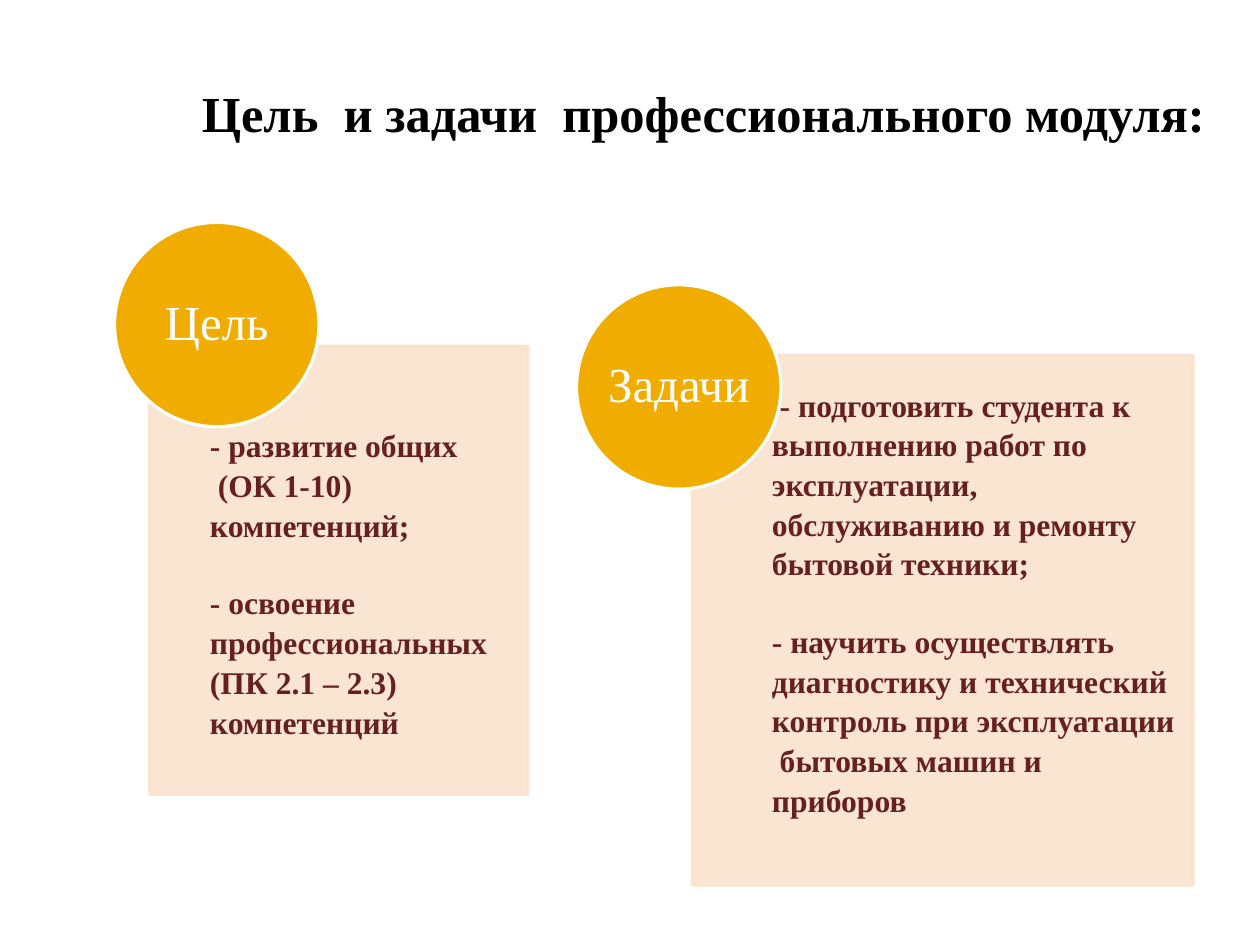
import pptx
import pptx.util
import pptx.dml.color
import pptx.enum.shapes
import pptx.enum.text
import pptx.oxml
import pptx.oxml.ns
import lxml.etree

Inches, Pt = pptx.util.Inches, pptx.util.Pt
RGBColor = pptx.dml.color.RGBColor
MSO_SHAPE = pptx.enum.shapes.MSO_SHAPE
ANCHOR = pptx.enum.text.MSO_ANCHOR
ALIGN = pptx.enum.text.PP_ALIGN

BLACK = RGBColor(0x00, 0x00, 0x00)
WHITE = RGBColor(0xFF, 0xFF, 0xFF)
PEACH = RGBColor(0xF9, 0xE3, 0xCC)
AMBER = RGBColor(0xF0, 0xAD, 0x00)
MAROON = RGBColor(0x67, 0x20, 0x20)
FONT = "Times New Roman"
CIRCLE_SIZE = 1.8


def write_text(sp, paragraphs, size, color, bold=False, align=ALIGN.LEFT,
               anchor=ANCHOR.MIDDLE, spacing=1.0, wrap=True, inset=0, right=0):
    """Fill a shape with (text, space before) paragraphs."""
    tf = sp.text_frame
    tf.word_wrap = wrap
    tf.vertical_anchor = anchor
    tf.margin_left = Inches(inset)
    tf.margin_right = Inches(right)
    tf.margin_top = tf.margin_bottom = 0
    for i, (text, before) in enumerate(paragraphs):
        p = tf.add_paragraph() if i else tf.paragraphs[0]
        p.alignment = align
        p.line_spacing = spacing
        if before:
            p.space_before = Pt(before)
        r = p.add_run()
        r.text = text
        r.font.name = FONT
        r.font.size = Pt(size)
        r.font.bold = bold
        r.font.color.rgb = color


def add_shape(s, kind, box, fill, line, opacity=None):
    sp = s.shapes.add_shape(kind, *map(Inches, box))
    sp.shadow.inherit = False
    sp.fill.solid()
    sp.fill.fore_color.rgb = fill
    sp.line.color.rgb = line
    sp.line.width = Pt(2)
    if opacity:
        for clr in sp._element.spPr.iter(pptx.oxml.ns.qn("a:srgbClr")):
            alpha = lxml.etree.SubElement(clr, pptx.oxml.ns.qn("a:alpha"))
            alpha.set("val", str(opacity * 1000))
    return sp


def add_card(s, label, panel, circle, text_box, right, paragraphs):
    """A peach panel with its text and a labelled circle at its corner."""
    add_shape(s, MSO_SHAPE.RECTANGLE, panel, PEACH, PEACH, opacity=90)
    body = s.shapes.add_textbox(*map(Inches, text_box))
    write_text(body, paragraphs, 20, MAROON, bold=True, anchor=ANCHOR.TOP,
               spacing=1.05, right=right)
    disc = add_shape(s, MSO_SHAPE.OVAL, (*circle, CIRCLE_SIZE, CIRCLE_SIZE),
                     AMBER, WHITE)
    write_text(disc, [(label, 0)], 31, WHITE, align=ALIGN.CENTER,
               spacing=0.9, wrap=False)


def main():
    prs = pptx.Presentation()
    prs.slide_width, prs.slide_height = Inches(11.1), Inches(8.3)
    s = prs.slides.add_slide(prs.slide_layouts[6])

    # Title
    title = s.shapes.add_textbox(Inches(1.68), Inches(0.49), Inches(9.23), Inches(1))
    write_text(title, [("Цель  и задачи  профессионального модуля:", 0)],
               32, BLACK, bold=True, inset=0.1, right=0.1)

    # Goal
    add_card(s, "Цель", (1.32, 3.05, 3.33, 3.95), (1.01, 1.96),
             (1.85, 3.74, 2.8, 3.26), 0.19,
             [("- развитие общих", 0),
              (" (ОК 1-10) компетенций;", 0),
              ("- освоение профессиональных", 24),
              ("(ПК 2.1 – 2.3) компетенций", 0)])

    # Tasks
    add_card(s, "Задачи", (6.1, 3.13, 4.41, 4.67), (5.08, 2.51),
             (6.8, 3.38, 3.71, 4.42), 0.16,
             [(" - подготовить студента к выполнению работ по эксплуатации, "
               "обслуживанию и ремонту бытовой техники;", 0),
              ("- научить осуществлять диагностику и технический контроль "
               "при эксплуатации  бытовых машин и приборов", 24)])

    prs.save("out.pptx")


if __name__ == "__main__":
    main()
